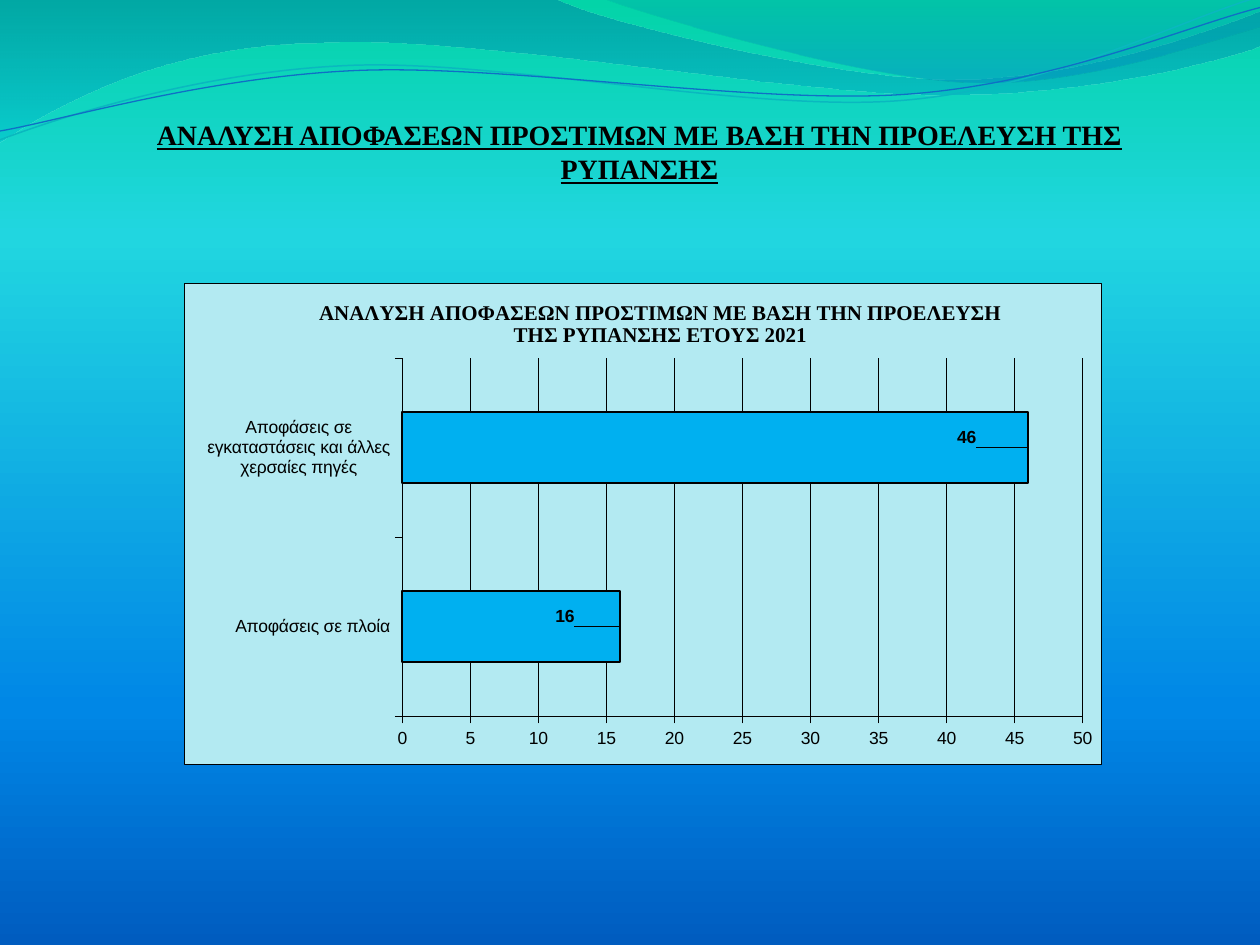
import dataclasses
import typing

import lxml.etree
import pptx
import pptx.chart.data
import pptx.dml.color
import pptx.enum.chart
import pptx.enum.text
import pptx.oxml
import pptx.oxml.ns
import pptx.util

Inches = pptx.util.Inches
Pt = pptx.util.Pt
qn = pptx.oxml.ns.qn
Point = tuple[float, float]


class Stop(typing.NamedTuple):
    position: int
    color: str
    opacity: int = 100


class Decision(typing.NamedTuple):
    source: str
    count: int
    label_shift: float


@dataclasses.dataclass(frozen=True)
class Theme:
    sky: tuple[Stop, ...] = (Stop(0, "03D4A8"), Stop(25, "21D6E0"), Stop(75, "0087E6"), Stop(100, "005CBF"))
    ink: str = "000000"
    panel: str = "B3EAF2"
    bar: str = "00B0F0"
    heading_font: str = "Times New Roman"
    chart_font: str = "Arial"
    heading_size: int = 16
    chart_title_size: int = 12
    chart_size: int = 10
    hairline: float = 0.25
    bar_line: float = 1


@dataclasses.dataclass(frozen=True)
class Wave:
    start: Point
    segments: tuple[tuple[Point, ...], ...]
    stops: tuple[Stop, ...] = ()
    line: str = ""
    width: float = 0


THEME = Theme()
WAVES = (
    Wave((0, -0.01), (
        ((4.4, -0.01),),
        ((4.76, 0.17), (6.64, 0.63), (7.58, 0.63)),
        ((8.53, 0.63), (9.58, 0.26), (10, 0.09)),
        ((10.01, 0.36),),
        ((9.83, 0.44), (8.7, 0.76), (7.46, 0.75)),
        ((6.22, 0.75), (3.82, 0.28), (2.57, 0.34)),
        ((1.29, 0.35), (0.46, 0.83), (-0.01, 1.13)),
        ((0, -0.01),),
    ), stops=(Stop(0, "0074A1", 45), Stop(100, "00C6CF", 55))),
    Wave((4.79, -0.01), (
        ((5.09, 0.11), (6.82, 0.62), (7.69, 0.65)),
        ((8.56, 0.69), (9.61, 0.32), (10, 0.21)),
        ((10, 0),),
        ((4.79, -0.01),),
    ), stops=(Stop(0, "00A1A9", 30), Stop(80, "008BBF", 45))),
    Wave((0, 1.11), (
        ((0.48, 0.93), (1.58, 0.57), (2.77, 0.52)),
        ((3.95, 0.47), (5.93, 0.89), (7.13, 0.8)),
        ((8.33, 0.71), (9.38, 0.15), (9.98, -0.02)),
    ), line="0AB8BF", width=0.85),
    Wave((0, 1.04), (
        ((0.47, 0.96), (1.64, 0.61), (2.83, 0.56)),
        ((4.03, 0.51), (5.97, 0.83), (7.17, 0.75)),
        ((8.36, 0.67), (9.41, 0.21), (10, 0.06)),
    ), line="0F6FC6", width=0.75),
)
DECISIONS = (
    Decision("Αποφάσεις σε πλοία", 16, -7.6),
    Decision("Αποφάσεις σε εγκαταστάσεις και άλλες χερσαίες πηγές", 46, -8.3),
)


def rgb(color: str) -> pptx.dml.color.RGBColor:
    return pptx.dml.color.RGBColor.from_string(color)


def style_font(font, name: str, size: float, bold: bool = False) -> None:
    font.name, font.size, font.bold = name, Pt(size), bold
    font.color.rgb = rgb(THEME.ink)


def style_line(line, color: str, width: float) -> None:
    line.color.rgb = rgb(color)
    line.width = Pt(width)


def set_gradient(fill, element, stops: tuple[Stop, ...]) -> None:
    fill.gradient()
    fill.gradient_angle = 270
    stop_list = next(element.iter(qn("a:gsLst")))
    for old in list(stop_list):
        stop_list.remove(old)
    for stop in stops:
        gs = lxml.etree.SubElement(stop_list, qn("a:gs"), pos=str(stop.position * 1000))
        color = lxml.etree.SubElement(gs, qn("a:srgbClr"), val=stop.color)
        if stop.opacity < 100:
            lxml.etree.SubElement(color, qn("a:alpha"), val=str(stop.opacity * 1000))


def bend_segments(element, wave: Wave) -> None:
    steps = iter(list(element.iter(qn("a:lnTo"))))
    for segment in wave.segments:
        first, *rest = [next(steps) for _ in segment]
        if rest:
            first.tag = qn("a:cubicBezTo")
            for step in rest:
                first.append(step[0])
                step.getparent().remove(step)


def draw_wave(slide, wave: Wave) -> None:
    points = [(Inches(x), Inches(y)) for segment in wave.segments for x, y in segment]
    builder = slide.shapes.build_freeform(Inches(wave.start[0]), Inches(wave.start[1]))
    builder.add_line_segments(points, close=bool(wave.stops))
    s = builder.convert_to_shape()
    bend_segments(s.element, wave)
    s.shadow.inherit = False
    if wave.stops:
        set_gradient(s.fill, s.element, wave.stops)
        s.line.fill.background()
    else:
        s.fill.background()
        style_line(s.line, wave.line, wave.width)


def draw_heading(slide, text: str) -> None:
    s = slide.shapes.add_textbox(Inches(1.14), Inches(0.77), Inches(7.87), Inches(0.7))
    tf = s.text_frame
    tf.word_wrap = True
    tf.vertical_anchor = pptx.enum.text.MSO_ANCHOR.BOTTOM
    tf.margin_left = tf.margin_right = tf.margin_bottom = 0
    tf.margin_top = Inches(0.05)
    p = tf.paragraphs[0]
    p.alignment = pptx.enum.text.PP_ALIGN.CENTER
    r = p.add_run()
    r.text = text
    style_font(r.font, THEME.heading_font, THEME.heading_size, bold=True)
    r.font.underline = True


def place(element, *modes: tuple[str, str], **percents: float) -> None:
    layout = pptx.oxml.parse_xml(f"<c:layout {pptx.oxml.ns.nsdecls('c')}><c:manualLayout/></c:layout>")
    values = [*modes, *((tag, f"{percent / 100:.3f}") for tag, percent in percents.items())]
    for tag, value in values:
        lxml.etree.SubElement(layout[0], qn(f"c:{tag}"), val=value)
    for old in element.findall(qn("c:layout")):
        element.remove(old)
    element.insert(len([e for e in element if e.tag in (qn("c:tx"), qn("c:idx"))]), layout)


def style_axis(axis) -> None:
    axis.major_tick_mark = pptx.enum.chart.XL_TICK_MARK.OUTSIDE
    axis.minor_tick_mark = pptx.enum.chart.XL_TICK_MARK.NONE
    style_font(axis.tick_labels.font, THEME.chart_font, THEME.chart_size)
    style_line(axis.format.line, THEME.ink, THEME.hairline)
    body = next(axis._element.iter(qn("a:bodyPr")))
    body.set("rot", "0")
    body.set("vert", "horz")


def draw_chart(slide, title: str) -> None:
    data = pptx.chart.data.CategoryChartData(number_format="#,##0")
    data.categories = [d.source for d in DECISIONS]
    data.add_series("Series 1", [d.count for d in DECISIONS])
    chart = slide.shapes.add_chart(
        pptx.enum.chart.XL_CHART_TYPE.BAR_CLUSTERED,
        Inches(1.46), Inches(2.25), Inches(7.28), Inches(3.82), data).chart
    style_font(chart.font, THEME.chart_font, THEME.chart_size)
    chart.has_legend = False
    edges = (("xMode", "edge"), ("yMode", "edge"))

    chart.has_title = True
    r = chart.chart_title.text_frame.paragraphs[0].add_run()
    r.text = title
    style_font(r.font, THEME.heading_font, THEME.chart_title_size, bold=True)
    place(chart.chart_title._element, *edges, x=14.3, y=2.5)
    chart.chart_title.include_in_layout = False

    style_axis(chart.category_axis)
    chart.category_axis.tick_label_position = pptx.enum.chart.XL_TICK_LABEL_POSITION.LOW
    axis = chart.value_axis
    style_axis(axis)
    axis.minimum_scale, axis.maximum_scale, axis.major_unit = 0, 50, 5
    axis.tick_labels.number_format, axis.tick_labels.number_format_is_linked = "#,##0", False
    style_line(axis.major_gridlines.format.line, THEME.ink, THEME.hairline)

    plot = chart.plots[0]
    plot.vary_by_categories = False
    plot.gap_width = 150
    series = plot.series[0]
    series.format.fill.solid()
    series.format.fill.fore_color.rgb = rgb(THEME.bar)
    style_line(series.format.line, THEME.ink, THEME.bar_line)
    labels = series.data_labels
    labels.show_value = True
    labels.number_format, labels.number_format_is_linked = "#,##0", False
    style_font(labels.font, THEME.chart_font, THEME.chart_size, bold=True)
    for i, decision in enumerate(DECISIONS):
        label = series.points[i].data_label
        style_font(label.font, THEME.chart_font, THEME.chart_size, bold=True)
        label.position = pptx.enum.chart.XL_LABEL_POSITION.OUTSIDE_END
        place(labels._element.findall(qn("c:dLbl"))[i], x=decision.label_shift, y=-2)
    for leader in labels._element.findall(qn("c:showLeaderLines")):
        labels._element.remove(leader)
    labels._element.append(pptx.oxml.parse_xml(
        f'<c:extLst {pptx.oxml.ns.nsdecls("c")}><c:ext uri="{{CE6537A1-D6FC-4f65-9D91-7224C49458BB}}" '
        'xmlns:c15="http://schemas.microsoft.com/office/drawing/2012/chart">'
        '<c15:showLeaderLines val="0"/></c:ext></c:extLst>'))

    space = chart._chartSpace
    place(space.chart.plotArea, ("layoutTarget", "inner"), *edges, x=23.8, y=15.5, w=74.2, h=74.4)
    space.chart.addnext(pptx.oxml.parse_xml(
        f'<c:spPr {pptx.oxml.ns.nsdecls("c", "a")}>'
        f'<a:solidFill><a:srgbClr val="{THEME.panel}"/></a:solidFill>'
        f'<a:ln w="{Pt(THEME.hairline)}"><a:solidFill><a:srgbClr val="{THEME.ink}"/></a:solidFill></a:ln>'
        '</c:spPr>'))


def main() -> None:
    prs = pptx.Presentation()
    prs.slide_width, prs.slide_height = Inches(10), Inches(7.5)
    slide = prs.slides.add_slide(prs.slide_layouts[6])
    set_gradient(slide.background.fill, slide.element, THEME.sky)
    for wave in WAVES:
        draw_wave(slide, wave)
    heading = "ΑΝΑΛΥΣΗ ΑΠΟΦΑΣΕΩΝ ΠΡΟΣΤΙΜΩΝ ΜΕ ΒΑΣΗ ΤΗΝ ΠΡΟΕΛΕΥΣΗ ΤΗΣ ΡΥΠΑΝΣΗΣ"
    draw_heading(slide, heading)
    draw_chart(slide, f"{heading} ΕΤΟΥΣ 2021")
    prs.save("out.pptx")


if __name__ == "__main__":
    main()
